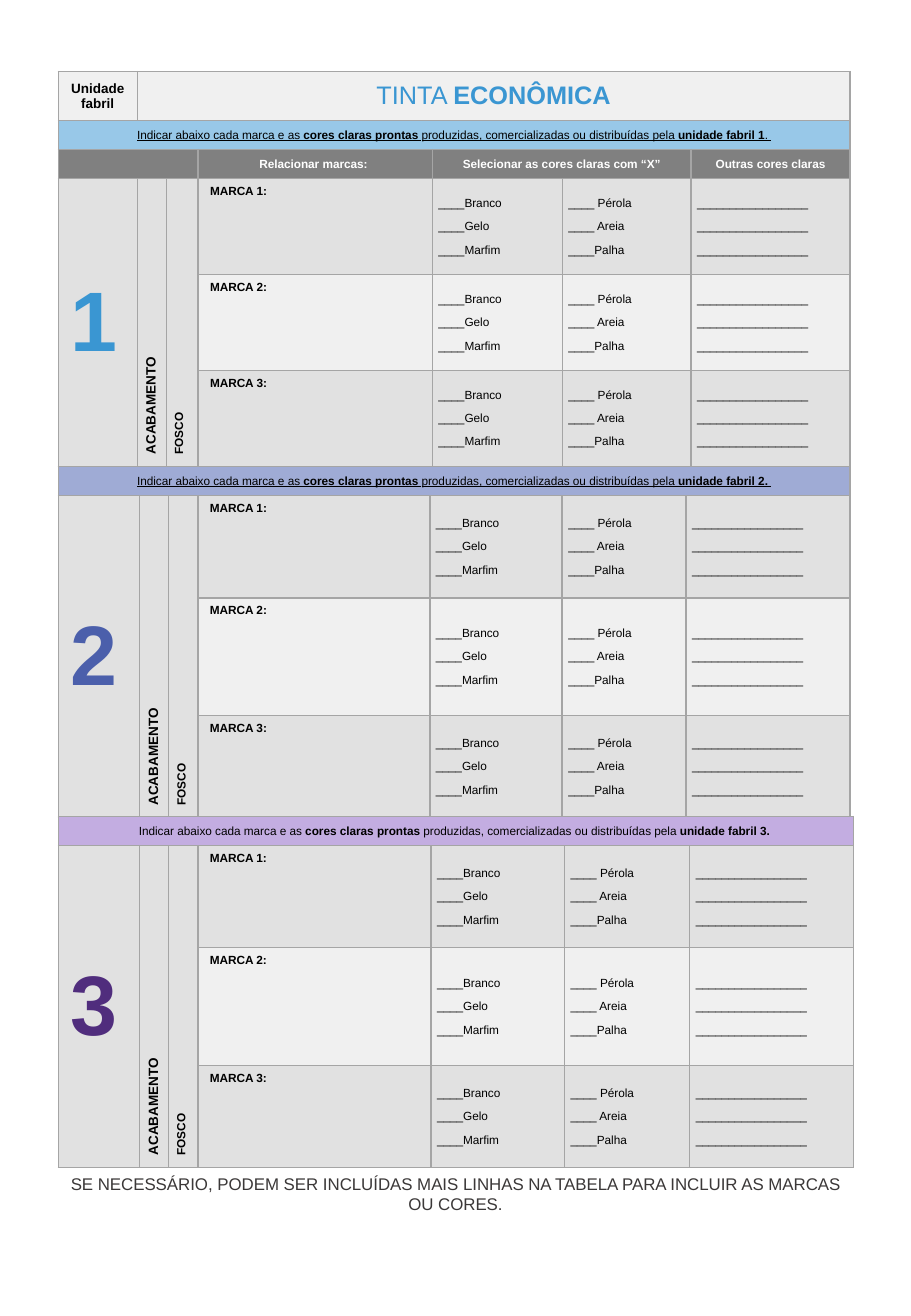
import pptx
import pptx.util
import pptx.dml.color
import pptx.enum.text
import pptx.oxml.ns
import lxml.etree

PX = 9144  # 100 px to the inch
LEFT = pptx.enum.text.PP_ALIGN.LEFT
MID = pptx.enum.text.PP_ALIGN.CENTER
TOP = pptx.enum.text.MSO_ANCHOR.TOP
CORE = pptx.enum.text.MSO_ANCHOR.MIDDLE


class Theme:
    font = "Arial"
    ink, white, note = "000000", "FFFFFF", "3B3838"
    line, head, dark, light = "A5A5A5", "808080", "E1E1E1", "F0F0F0"
    title = "3A96D2"
    small, label, foot, large, digit = 7, 8, 10, 15, 50


CHOICES = [
    ["____Branco", "____Gelo", "____Marfim"],
    ["____ Pérola", "____ Areia", "____Palha"],
    ["_" * 17] * 3,
]

# Box, columns, brand rows, band colour, digit colour, underline, end of band text
UNITS = [
    ((48, 59, 651, 325), [65, 23, 26, 193, 107, 106, 131], [79, 79, 79],
     "98C8E8", "3A96D2", True, [("unidade fabril 1", True), (". ", False)]),
    ((48, 384, 651, 288), [67, 24, 23, 191, 109, 102, 135], [84, 97, 84],
     "9FABD5", "4B5FAB", True, [("unidade fabril 2. ", True)]),
    ((48, 672, 654, 288), [67, 23, 23, 192, 110, 103, 135], [84, 97, 84],
     "C3ADE1", "502D7D", False, [("unidade fabril 3. ", True)]),
]


def rgb(code):
    return pptx.dml.color.RGBColor.from_string(code)


def paint(cell, code):
    cell.fill.solid()
    cell.fill.fore_color.rgb = rgb(code)


def style(run, size, ink, bold=False, under=False):
    font = run.font
    font.name = Theme.font
    font.size = pptx.util.Pt(size)
    font.color.rgb = rgb(ink)
    font.bold = bold
    font.underline = under


def frame(cell):
    """Draw the four borders and keep an empty cell small."""
    props = cell._tc.get_or_add_tcPr()
    qn = pptx.oxml.ns.qn
    for spot, side in enumerate(("a:lnL", "a:lnR", "a:lnT", "a:lnB")):
        line = lxml.etree.Element(qn(side), w=str(pptx.util.Pt(1)))
        fill = lxml.etree.SubElement(line, qn("a:solidFill"))
        lxml.etree.SubElement(fill, qn("a:srgbClr"), val=Theme.line)
        props.insert(spot, line)
    para = cell.text_frame.paragraphs[0]._p
    lxml.etree.SubElement(para, qn("a:endParaRPr"), sz=str(Theme.small * 100))


def write(cell, parts, size=Theme.small, ink=Theme.ink, fill=Theme.dark,
          align=MID, anchor=CORE, under=False):
    """Fill one cell with a line of (text, bold) parts."""
    paint(cell, fill)
    cell.vertical_anchor = anchor
    para = cell.text_frame.paragraphs[0]
    para.alignment = align
    for text, bold in parts:
        run = para.add_run()
        run.text = text
        style(run, size, ink, bold, under)


def choose(cell, lines, fill):
    """Fill one cell with a list of blanks to mark."""
    paint(cell, fill)
    cell.vertical_anchor = CORE
    cell.margin_left = cell.margin_right = 5 * PX
    cell.margin_top = cell.margin_bottom = 0
    cell.text_frame.text = "\n".join(lines)
    for para in cell.text_frame.paragraphs:
        para.space_after = pptx.util.Pt(6)
        style(para.runs[0], Theme.small, Theme.ink)


def grid(slide, box, cols, rows):
    spot = [n * PX for n in box]
    table = slide.shapes.add_table(len(rows), len(cols), *spot).table
    table.first_row = table.horz_banding = False
    for col, wide in zip(table.columns, cols):
        col.width = wide * PX
    for row, high in zip(table.rows, rows):
        row.height = high * PX
    for cell in table.iter_cells():
        paint(cell, Theme.dark)
        frame(cell)
    return table


def span(table, row, col, last_row, last_col):
    cell = table.cell(row, col)
    cell.merge(table.cell(last_row, last_col))
    return cell


def title(table):
    write(table.cell(0, 0), [("Unidade fabril", True)], Theme.label,
          fill=Theme.light)
    write(span(table, 0, 1, 0, 6), [("TINTA ", False), ("ECONÔMICA", True)],
          Theme.large, Theme.title, Theme.light)


def header(table, row):
    paint(span(table, row, 0, row, 2), Theme.head)
    span(table, row, 4, row, 5)
    heads = {3: "Relacionar marcas: ", 4: "Selecionar as cores claras com “X”",
             6: "Outras cores claras"}
    for col, text in heads.items():
        write(table.cell(row, col), [(text, True)], ink=Theme.white,
              fill=Theme.head)


def unit(slide, num, box, cols, rows, band, tint, under, tail):
    """Table of one plant; the first also carries the title and header."""
    first = num == 1
    top = [40, 24, 24] if first else [24]
    table = grid(slide, box, cols, top + rows)
    if first:
        title(table)
        header(table, 2)

    # Band with the instruction
    row = 1 if first else 0
    lead = [("Indicar abaixo cada marca e as ", False),
            ("cores claras prontas ", True),
            ("produzidas, comercializadas ou distribuídas pela ", False)]
    write(span(table, row, 0, row, 6), lead + tail, fill=band, under=under)

    # Tall cells at the left
    start, end = len(top), len(top) + len(rows) - 1
    tall = [(str(num), Theme.digit, tint),
            ("ACABAMENTO", Theme.label, Theme.ink),
            ("FOSCO", Theme.small, Theme.ink)]
    for col, (text, size, ink) in enumerate(tall):
        cell = span(table, start, col, end, col)
        write(cell, [(text, True)], size, ink, align=LEFT)
        if col:
            cell._tc.get_or_add_tcPr().set("vert", "vert270")

    # Brand rows
    for mark in range(len(rows)):
        fill = Theme.light if mark % 2 else Theme.dark
        row = start + mark
        write(table.cell(row, 3), [(f"MARCA {mark + 1}:", True)], fill=fill,
              align=LEFT, anchor=TOP)
        for col, lines in enumerate(CHOICES, 4):
            choose(table.cell(row, col), lines, fill)


def footer(slide, box):
    text = slide.shapes.add_textbox(*[n * PX for n in box]).text_frame
    text.word_wrap = True
    text.auto_size = pptx.enum.text.MSO_AUTO_SIZE.SHAPE_TO_FIT_TEXT
    text.text = ("SE NECESSÁRIO, PODEM SER INCLUÍDAS MAIS LINHAS NA TABELA "
                 "PARA INCLUIR AS MARCAS OU CORES.")
    para = text.paragraphs[0]
    para.alignment = MID
    style(para.runs[0], Theme.foot, Theme.note)


def main():
    deck = pptx.Presentation()
    deck.slide_width, deck.slide_height = 750 * PX, 1083 * PX
    slide = deck.slides.add_slide(deck.slide_layouts[6])
    for num, parts in enumerate(UNITS, 1):
        unit(slide, num, *parts)
    footer(slide, (48, 961, 654, 44))
    deck.save("out.pptx")


if __name__ == "__main__":
    main()
